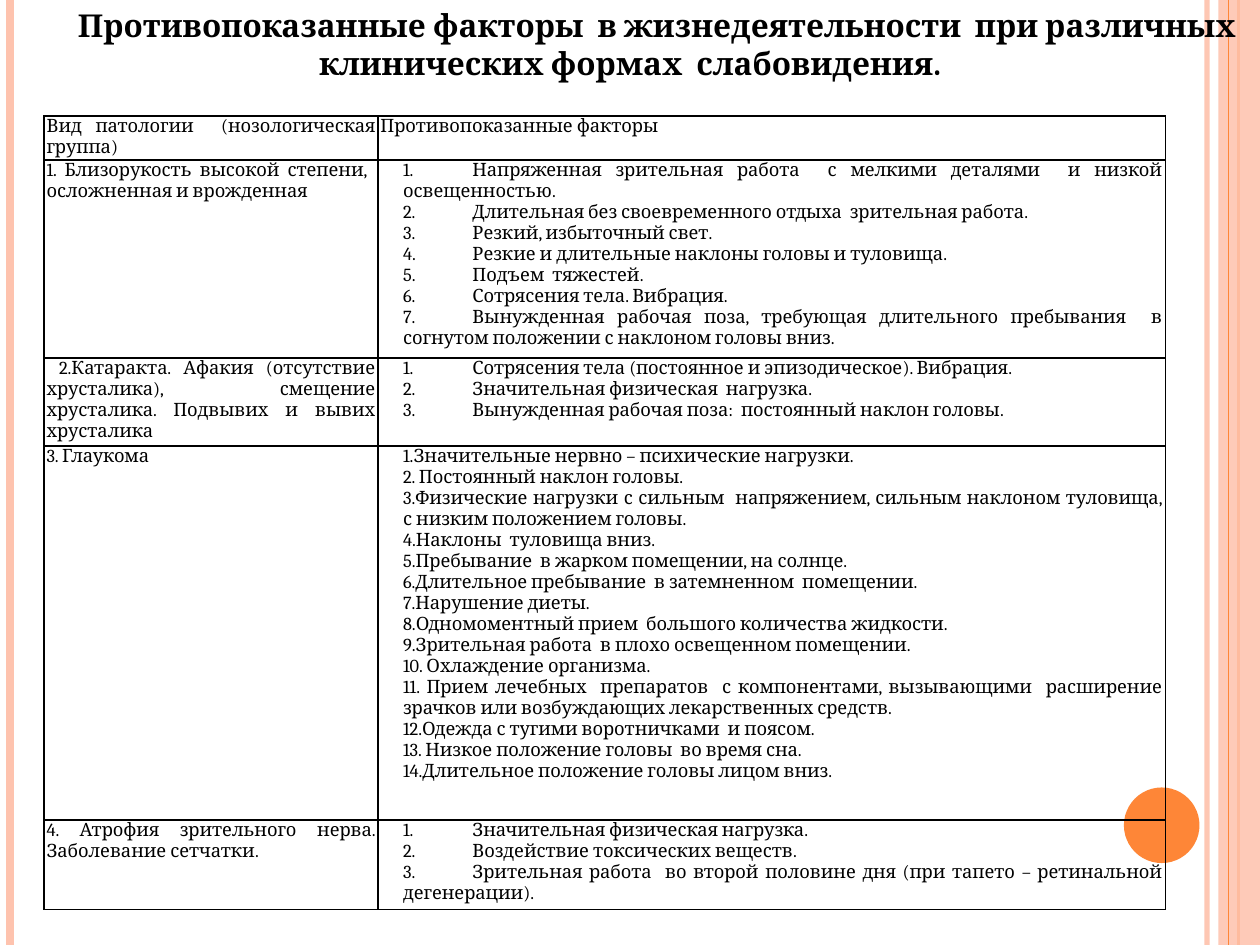
import pptx
import pptx.util
import pptx.dml.color
import pptx.enum.shapes
import pptx.enum.text
import pptx.oxml.ns
from lxml import etree

Inches, Pt = pptx.util.Inches, pptx.util.Pt
Align = pptx.enum.text.PP_ALIGN
Kind = pptx.enum.shapes.MSO_SHAPE
qn = pptx.oxml.ns.qn

TITLE = ("Противопоказанные факторы  в жизнедеятельности  при различных  "
         "клинических формах  слабовидения.")
HEAD = ("Вид патологии  (нозологическая группа)", ["Противопоказанные факторы"])
GROUPS = [
    ("1. Близорукость высокой степени,  осложненная и врожденная", [
        "1.\tНапряженная зрительная работа  с мелкими деталями  и низкой освещенностью.",
        "2.\tДлительная без своевременного отдыха  зрительная работа.",
        "3.\tРезкий, избыточный свет.",
        "4.\tРезкие и длительные наклоны головы и туловища.",
        "5.\tПодъем  тяжестей.",
        "6.\tСотрясения тела. Вибрация.",
        "7.\tВынужденная рабочая поза, требующая длительного пребывания  "
        "в согнутом положении с наклоном головы вниз.",
    ]),
    (" 2.Катаракта. Афакия (отсутствие хрусталика), смещение хрусталика. "
     "Подвывих и вывих хрусталика", [
        "1.\tСотрясения тела (постоянное и эпизодическое). Вибрация.",
        "2.\tЗначительная физическая  нагрузка.",
        "3.\tВынужденная рабочая поза:  постоянный наклон головы.",
     ]),
    ("3. Глаукома", [
        "1.Значительные нервно – психические нагрузки.",
        "2. Постоянный наклон головы.",
        "3.Физические нагрузки с сильным  напряжением, сильным наклоном туловища, "
        "с низким положением головы.",
        "4.Наклоны  туловища вниз.",
        "5.Пребывание  в жарком помещении, на солнце.",
        "6.Длительное пребывание  в затемненном  помещении.",
        "7.Нарушение диеты.",
        "8.Одномоментный прием  большого количества жидкости.",
        "9.Зрительная работа  в плохо освещенном помещении.",
        "10. Охлаждение организма.",
        "11. Прием лечебных  препаратов  с компонентами, вызывающими  расширение "
        "зрачков или возбуждающих лекарственных средств.",
        "12.Одежда с тугими воротничками  и поясом.",
        "13. Низкое положение головы  во время сна.",
        "14.Длительное положение головы лицом вниз.",
    ]),
    ("4. Атрофия зрительного нерва. Заболевание сетчатки.", [
        "1.\tЗначительная физическая нагрузка.",
        "2.\tВоздействие токсических веществ.",
        "3.\tЗрительная работа  во второй половине дня "
        "(при тапето – ретинальной дегенерации).",
    ]),
]
COLS = [2.65, 6.25]
ROWS = [0.35, 1.57, 0.7, 2.97, 0.71]
PINK, ORANGE, BLACK = "FEC3AE", "FE8637", "000000"
# x, colour, width, opacity in percent
BACK = [(9.58, PINK, 3, 93), (0.08, PINK, 4.5, 100), (9.83, ORANGE, 1.5, 100)]
FRONT = [(9.75, ORANGE, 0.75, 100)]


def paint(target, color):
    target.rgb = pptx.dml.color.RGBColor.from_string(color)


def fade(shape, part):
    """Set the opacity of the first colour in the shape, in percent."""
    tint = next(shape._element.spPr.iter(qn("a:srgbClr")))
    etree.SubElement(tint, qn("a:alpha"), val=str(part * 1000))


def rule(x, color, width, part):
    line = slide.shapes.add_connector(
        pptx.enum.shapes.MSO_CONNECTOR.STRAIGHT, Inches(x), 0, Inches(x), Inches(7.5))
    paint(line.line.color, color)
    line.line.width = Pt(width)
    if part < 100:
        fade(line, part)
    etree.SubElement(line._element.spPr, qn("a:effectLst"))


def block(kind, color, *box):
    shape = slide.shapes.add_shape(kind, *map(Inches, box))
    shape.shadow.inherit = False
    shape.fill.solid()
    paint(shape.fill.fore_color, color)
    shape.line.fill.background()
    return shape


def write(par, text, align, size, bold=False, left=0, first=0, tabs=()):
    par.alignment = align
    run = par.add_run()
    run.text = text
    style = {"name": "Cambria", "size": Pt(size), "bold": bold}
    for key, value in style.items():
        setattr(run.font, key, value)
    paint(run.font.color, BLACK)
    props = par._p.get_or_add_pPr()
    # An explicit zero indent would cancel the tab stops.
    for key, value in {"marL": left, "indent": first}.items():
        if value:
            props.set(key, str(Inches(value)))
    stops = etree.SubElement(props, qn("a:tabLst"))
    for stop in tabs:
        etree.SubElement(stops, qn("a:tab"), pos=str(Inches(stop)), algn="l")


def frame(cell):
    """Leave the cell clear and draw a thin black line on each side."""
    cell.fill.background()
    props = cell._tc.get_or_add_tcPr()
    for spot, side in enumerate("LRTB"):
        edge = etree.Element(qn("a:ln" + side), w=str(Pt(1)))
        fill = etree.SubElement(edge, qn("a:solidFill"))
        etree.SubElement(fill, qn("a:srgbClr"), val=BLACK)
        props.insert(spot, edge)


def fill_cell(cell, lines, left, tabs):
    edges = {"margin_left": 0.02, "margin_right": 0.02, "margin_top": 0, "margin_bottom": 0}
    for key, value in edges.items():
        setattr(cell, key, Inches(value))
    frame(cell)
    text = cell.text_frame
    for spot, line in enumerate(lines):
        par = text.add_paragraph() if spot else text.paragraphs[0]
        write(par, line, Align.JUSTIFY, 10.5, left=left, tabs=tabs)


deck = pptx.Presentation()
deck.slide_width, deck.slide_height = Inches(10), Inches(7.5)
slide = deck.slides.add_slide(deck.slide_layouts[6])

for item in BACK:
    rule(*item)
fade(block(Kind.RECTANGLE, PINK, 9.67, 0, 0.33, 7.5), 87)
for item in FRONT:
    rule(*item)
block(Kind.OVAL, ORANGE, 8.92, 6.25, 0.6, 0.6)

grid = slide.shapes.add_table(
    len(ROWS), len(COLS), Inches(0.35), Inches(0.92),
    Inches(sum(COLS)), Inches(sum(ROWS))).table
grid.first_row = grid.horz_banding = False
for col, width in zip(grid.columns, COLS):
    col.width = Inches(width)
for row, height in zip(grid.rows, ROWS):
    row.height = Inches(height)
for spot, (name, facts) in enumerate([HEAD] + GROUPS):
    fill_cell(grid.cell(spot, 0), [name], 0, [1.44])
    left, tabs = (0.18, [0.55, 1.44]) if spot else (0, [1.44])
    fill_cell(grid.cell(spot, 1), facts, left, tabs)

title = slide.shapes.add_textbox(0, 0, Inches(10), Inches(1.11)).text_frame
title.word_wrap = True
title.vertical_anchor = pptx.enum.text.MSO_ANCHOR.TOP
write(title.paragraphs[0], TITLE, Align.CENTER, 18, bold=True, first=0.49,
      tabs=[0.55, 0.75, 1.44])

deck.save("out.pptx")
